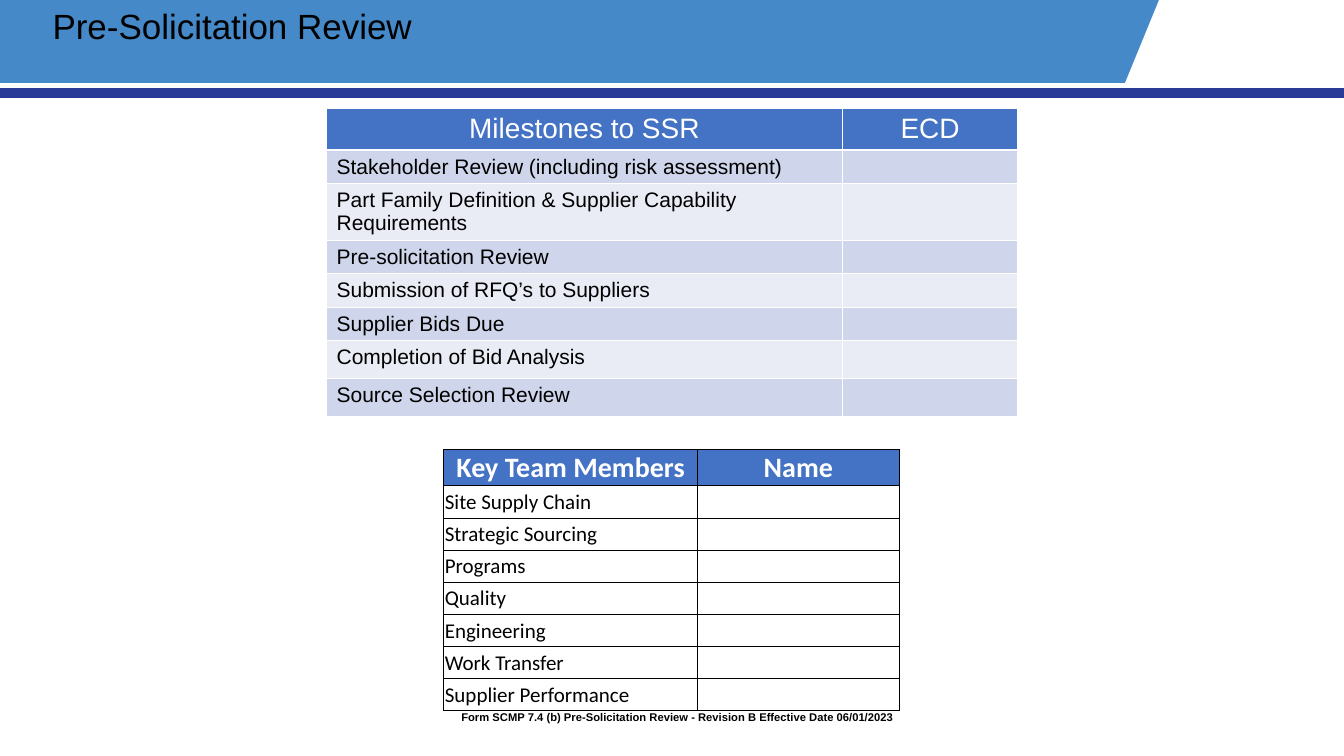
from dataclasses import dataclass

from lxml import etree
from pptx import Presentation
from pptx.dml.color import RGBColor
from pptx.enum.shapes import MSO_SHAPE
from pptx.enum.text import MSO_ANCHOR, MSO_AUTO_SIZE, PP_ALIGN
from pptx.oxml.ns import qn
from pptx.util import Cm, Pt

RECT = MSO_SHAPE.RECTANGLE
TOP, MIDDLE = MSO_ANCHOR.TOP, MSO_ANCHOR.MIDDLE
LEFT, CENTER = PP_ALIGN.LEFT, PP_ALIGN.CENTER
NO_FIT = MSO_AUTO_SIZE.NONE
TITLE_ONLY = 5
WIDTH, HEIGHT = 33.87, 19.05


@dataclass(frozen=True)
class Theme:
    band: str = "4589C8"
    rule: str = "2A3B97"
    header: str = "4472C4"
    stripes: tuple = ("CFD5EA", "E9EBF5")
    white: str = "FFFFFF"
    black: str = "000000"
    font: str = "Arial"
    team_font: str = "Calibri"
    title_size: int = 25
    header_size: int = 20
    body_size: int = 15
    footer_size: int = 8


@dataclass(frozen=True)
class TableStyle:
    font: str
    border: str
    border_width: float
    bold_header: bool
    anchor: MSO_ANCHOR
    stripes: tuple = ()
    margins: tuple = ()


class SlideBuilder:
    def __init__(self, slide, theme):
        self.slide = slide
        self.theme = theme

    def format(self, p, font, size, color, bold=False, align=LEFT):
        p.alignment = align
        p.font.name = font
        p.font.size = Pt(size)
        p.font.bold = bold
        p.font.color.rgb = RGBColor.from_string(color)

    def paint(self, sp, color):
        sp.shadow.inherit = False
        sp.fill.solid()
        sp.fill.fore_color.rgb = RGBColor.from_string(color)
        sp.line.fill.background()

    def bar(self, y, w, h, color):
        sp = self.slide.shapes.add_shape(RECT, 0, Cm(y), Cm(w), Cm(h))
        self.paint(sp, color)

    def polygon(self, points, color):
        start, *rest = [(Cm(x), Cm(y)) for x, y in points]
        builder = self.slide.shapes.build_freeform(*start)
        builder.add_line_segments(rest, close=True)
        self.paint(builder.convert_to_shape(), color)

    def title(self, text, x, y, w, h):
        sp = self.slide.shapes.title
        # The title sits in front of the header band.
        self.slide.shapes._spTree.append(sp._element)
        sp.left, sp.top, sp.width, sp.height = Cm(x), Cm(y), Cm(w), Cm(h)
        tf = sp.text_frame
        tf.text = text
        tf.auto_size = NO_FIT
        tf.vertical_anchor = TOP
        p = tf.paragraphs[0]
        p.line_spacing = 0.9
        self.format(p, self.theme.font, self.theme.title_size, self.theme.black)

    def footer(self, text, x, y, w, h):
        tf = self.slide.shapes.add_textbox(Cm(x), Cm(y), Cm(w), Cm(h)).text_frame
        tf.word_wrap = True
        tf.text = text
        p = tf.paragraphs[0]
        pPr = p._p.get_or_add_pPr()
        pPr.set("marL", str(Cm(1.27)))
        pPr.set("indent", str(Cm(-0.635)))
        p.line_spacing = 0.9
        self.format(p, self.theme.font, self.theme.footer_size, self.theme.black, bold=True)

    def borders(self, cell, color, width):
        tcPr = cell._tc.get_or_add_tcPr()
        for side in ("lnL", "lnR", "lnT", "lnB"):
            ln = etree.SubElement(tcPr, qn(f"a:{side}"), w=str(Pt(width)))
            fill = etree.SubElement(ln, qn("a:solidFill"))
            etree.SubElement(fill, qn("a:srgbClr"), val=color)

    def cell(self, cell, text, row, style):
        header = row == 0
        theme = self.theme
        if style.margins:
            (cell.margin_left, cell.margin_top,
             cell.margin_right, cell.margin_bottom) = map(Cm, style.margins)
        if not text:
            cell.margin_top = cell.margin_bottom = 0
        cell.vertical_anchor = style.anchor
        cell.text = text
        self.format(cell.text_frame.paragraphs[0], style.font,
                    theme.header_size if header else theme.body_size,
                    theme.white if header else theme.black,
                    bold=header and style.bold_header,
                    align=CENTER if header else LEFT)
        self.borders(cell, style.border, style.border_width)
        if header or style.stripes:
            color = theme.header if header else style.stripes[(row - 1) % 2]
            cell.fill.solid()
            cell.fill.fore_color.rgb = RGBColor.from_string(color)
        else:
            cell.fill.background()

    def table(self, header, labels, x, y, widths, heights, style):
        """Draw a header row, then one row per label with an empty second cell."""
        rows = [header] + [(label, "") for label in labels]
        table = self.slide.shapes.add_table(
            len(rows), len(widths), Cm(x), Cm(y),
            Cm(sum(widths)), Cm(sum(heights))).table
        table.first_row = table.horz_banding = False
        for column, w in zip(table.columns, widths):
            column.width = Cm(w)
        for i, (texts, h) in enumerate(zip(rows, heights)):
            table.rows[i].height = Cm(h)
            for j, text in enumerate(texts):
                self.cell(table.cell(i, j), text, i, style)


MILESTONES = [
    "Stakeholder Review (including risk assessment)",
    "Part Family Definition & Supplier Capability Requirements",
    "Pre-solicitation Review",
    "Submission of RFQ’s to Suppliers",
    "Supplier Bids Due",
    "Completion of Bid Analysis",
    "Source Selection Review",
]
TEAM = [
    "Site Supply Chain",
    "Strategic Sourcing",
    "Programs",
    "Quality",
    "Engineering",
    "Work Transfer",
    "Supplier Performance",
]


def main():
    prs = Presentation()
    prs.slide_width, prs.slide_height = Cm(WIDTH), Cm(HEIGHT)
    theme = Theme()
    s = SlideBuilder(prs.slides.add_slide(prs.slide_layouts[TITLE_ONLY]), theme)

    s.bar(0, 33.5, 2.09, theme.band)
    s.polygon([(29.21, 0), (WIDTH, 0), (WIDTH, 2.22), (28.3, 2.22)], theme.white)
    s.bar(2.22, WIDTH, 0.25, theme.rule)
    s.title("Pre-Solicitation Review", 1.07, 0.1, 18.06, 2.41)

    s.table(("Milestones to SSR", "ECD"), MILESTONES, 8.23, 2.72, (13, 4.42),
            (1.06, 0.84, 1.43, 0.84, 0.84, 0.84, 0.96, 0.96),
            TableStyle(theme.font, theme.white, 1, False, TOP, theme.stripes))
    s.table(("Key Team Members", "Name"), TEAM, 11.18, 11.33, (6.4, 5.08),
            [0.91] + [0.81] * len(TEAM),
            TableStyle(theme.team_font, theme.black, 0.5, True, MIDDLE,
                       margins=(0.03, 0.03, 0.03, 0)))
    s.footer("Form SCMP 7.4 (b) Pre-Solicitation Review - Revision B Effective Date 06/01/2023",
             10.74, 17.81, 12.4, 0.97)
    prs.save("out.pptx")


if __name__ == "__main__":
    main()
